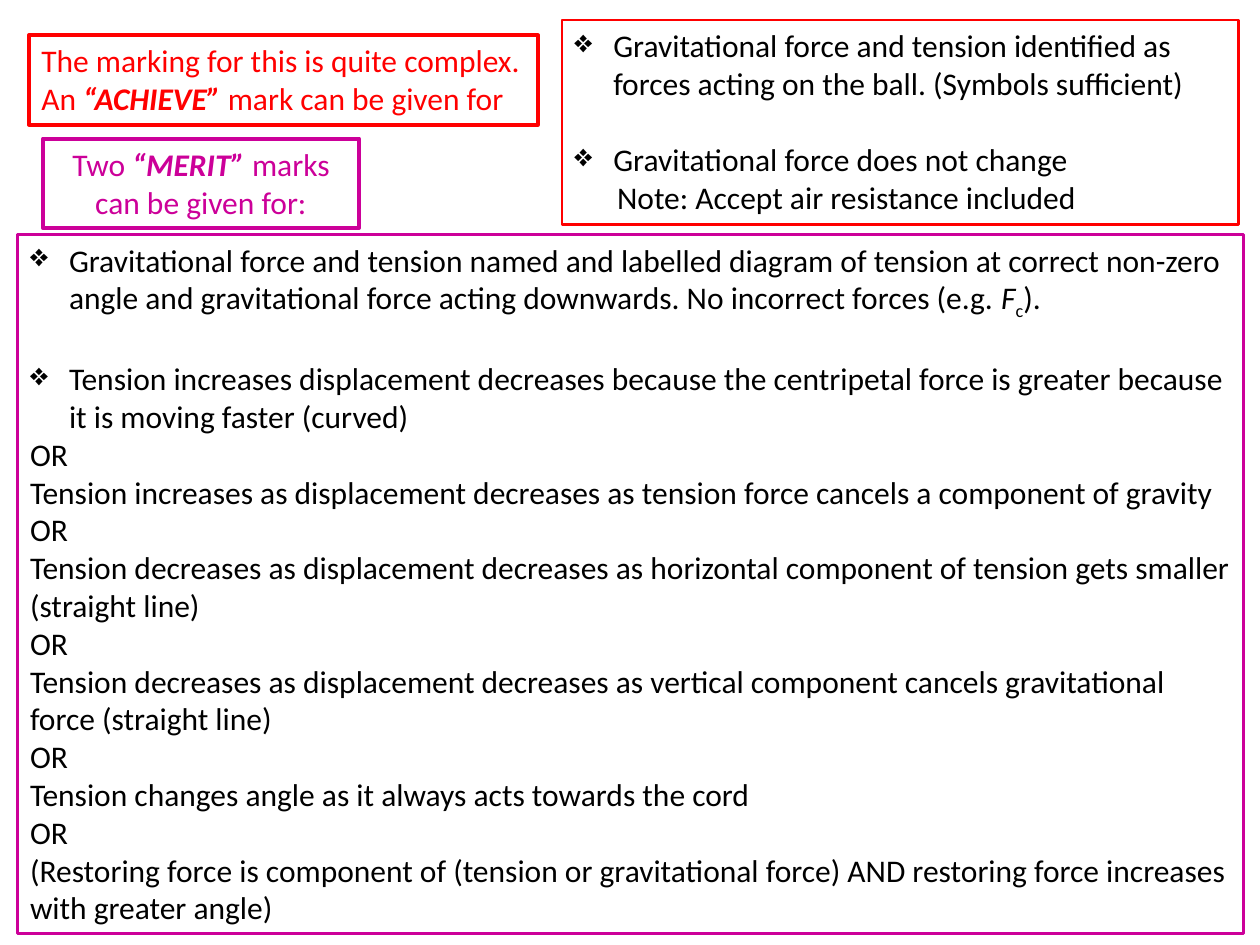
from lxml.etree import SubElement
from pptx import Presentation
from pptx.dml.color import RGBColor
from pptx.enum.text import MSO_AUTO_SIZE as AutoSize, PP_ALIGN as Align
from pptx.oxml.ns import qn
from pptx.util import Inches, Pt

RED, MAGENTA, BLACK = "FF0000", "CC0099", "000000"
BLANK_LINE = Pt(21.6)


def set_color(color_format, value):
    color_format.rgb = RGBColor.from_string(value)


def add_box(slide, box, line_color, line_width, wrap=True):
    shape = slide.shapes.add_textbox(*(Inches(length) for length in box))
    set_color(shape.line.color, line_color)
    shape.line.width = Pt(line_width)
    frame = shape.text_frame
    frame.word_wrap = wrap
    frame.auto_size = AutoSize.SHAPE_TO_FIT_TEXT
    return frame


def add_run(paragraph, text, style=""):
    run = paragraph.add_run()
    run.text = text
    if style == "strong":
        run.font.bold = run.font.italic = True
    elif style == "italic":
        run.font.italic = True
    elif style == "subscript":
        run.font._element.set("baseline", "-25000")


def format_text(frame, color):
    for paragraph in frame.paragraphs:
        for run in paragraph.runs:
            run.font.name = "Calibri"
            run.font.size = Pt(18)
            set_color(run.font.color, color)


def set_indent(paragraph, margin, first_line=0):
    properties = paragraph._p.get_or_add_pPr()
    properties.set("marL", str(Inches(margin)))
    properties.set("indent", str(Inches(first_line)))
    return properties


def add_bullet(paragraph):
    properties = set_indent(paragraph, 0.31, -0.31)
    SubElement(properties, qn("a:buChar")).set("char", "❖")


def add_achieve_heading(slide, box):
    frame = add_box(slide, box, RED, 2.25, wrap=False)
    frame.text = "The marking for this is quite complex."
    paragraph = frame.add_paragraph()
    add_run(paragraph, "An ")
    add_run(paragraph, "“ACHIEVE”", "strong")
    add_run(paragraph, " mark can be given for")
    format_text(frame, RED)


def add_merit_heading(slide, box):
    frame = add_box(slide, box, MAGENTA, 2.25)
    paragraph = frame.paragraphs[0]
    paragraph.alignment = Align.CENTER
    add_run(paragraph, "Two ")
    add_run(paragraph, "“MERIT”", "strong")
    add_run(paragraph, " marks can be given for:")
    format_text(frame, MAGENTA)


def add_achieve_criteria(slide, box):
    frame = add_box(slide, box, RED, 1.5)
    frame.text = "\n".join([
        "Gravitational force and tension identified as forces acting on the ball. (Symbols sufficient)",
        "Gravitational force does not change",
        "Note: Accept air resistance included",
    ])
    forces, gravity, note = frame.paragraphs
    add_bullet(forces)
    add_bullet(gravity)
    forces.space_after = BLANK_LINE
    set_indent(note, 0.34)
    format_text(frame, BLACK)


def add_merit_criteria(slide, box):
    alternatives = [
        "Tension increases displacement decreases because the centripetal force is greater "
        "because it is moving faster (curved)",
        "Tension increases as displacement decreases as tension force cancels a component of gravity",
        "Tension decreases as displacement decreases as horizontal component of tension gets "
        "smaller (straight line)",
        "Tension decreases as displacement decreases as vertical component cancels "
        "gravitational force (straight line)",
        "Tension changes angle as it always acts towards the cord",
        "(Restoring force is component of (tension or gravitational force) AND restoring force "
        "increases with greater angle)",
    ]
    frame = add_box(slide, box, MAGENTA, 1.5)
    diagram = frame.paragraphs[0]
    add_run(diagram, "Gravitational force and tension named and labelled diagram of tension at correct "
            "non-zero angle and gravitational force acting downwards. No incorrect forces (e.g. ")
    add_run(diagram, "F", "italic")
    add_run(diagram, "c", "subscript")
    add_run(diagram, ").")
    diagram.space_after = BLANK_LINE
    for line in "\nOR\n".join(alternatives).split("\n"):
        frame.add_paragraph().text = line
    for paragraph in frame.paragraphs[:2]:
        add_bullet(paragraph)
    format_text(frame, BLACK)


def main():
    presentation = Presentation()
    presentation.slide_width = Inches(10)
    presentation.slide_height = Inches(7.5)
    slide = presentation.slides.add_slide(presentation.slide_layouts[6])
    add_achieve_criteria(slide, (4.46, 0.16, 5.37, 1.62))
    add_merit_criteria(slide, (0.14, 1.86, 9.73, 5.55))
    add_achieve_heading(slide, (0.23, 0.28, 4.04, 0.71))
    add_merit_heading(slide, (0.34, 1.1, 2.51, 0.71))
    presentation.save("out.pptx")


if __name__ == "__main__":
    main()
